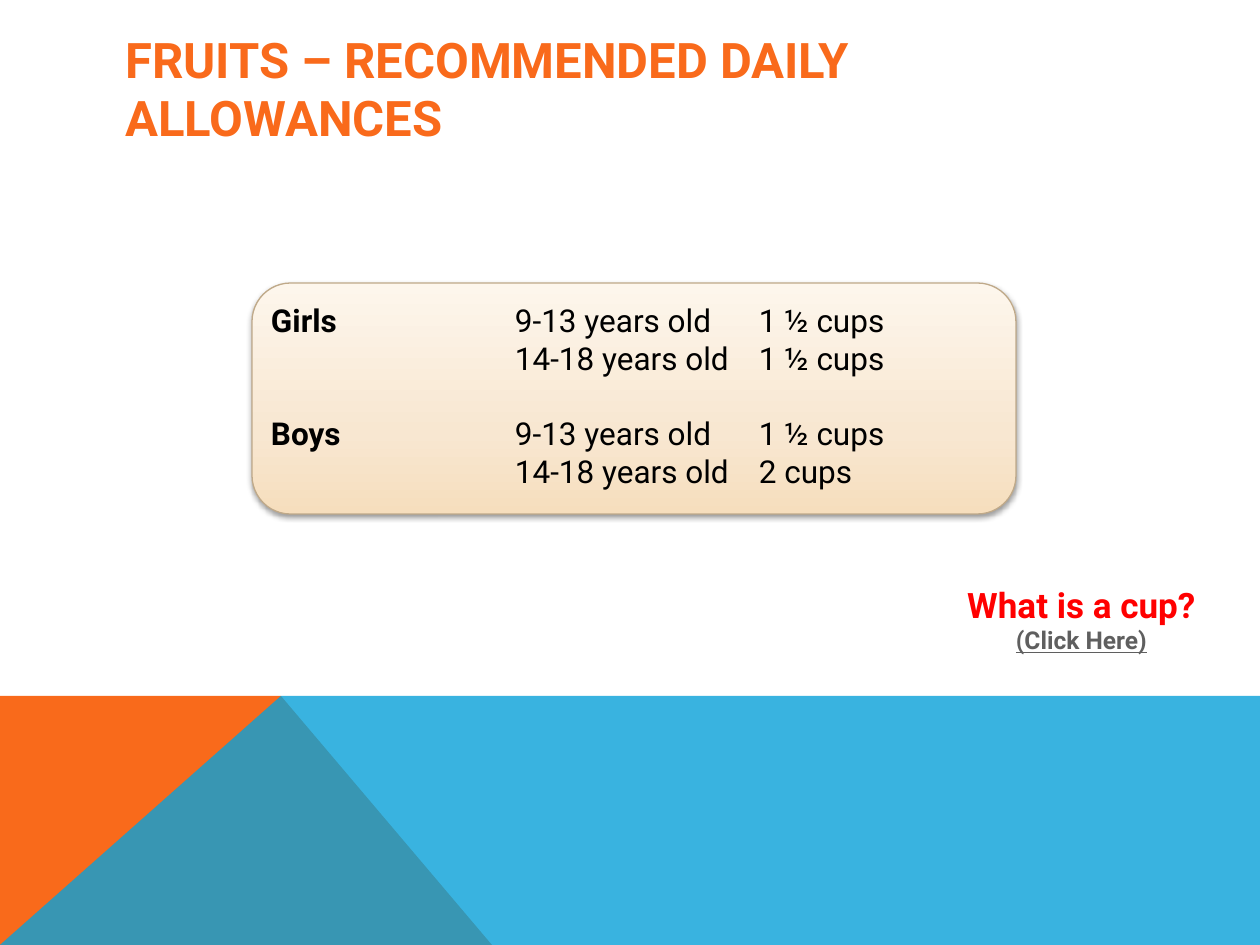
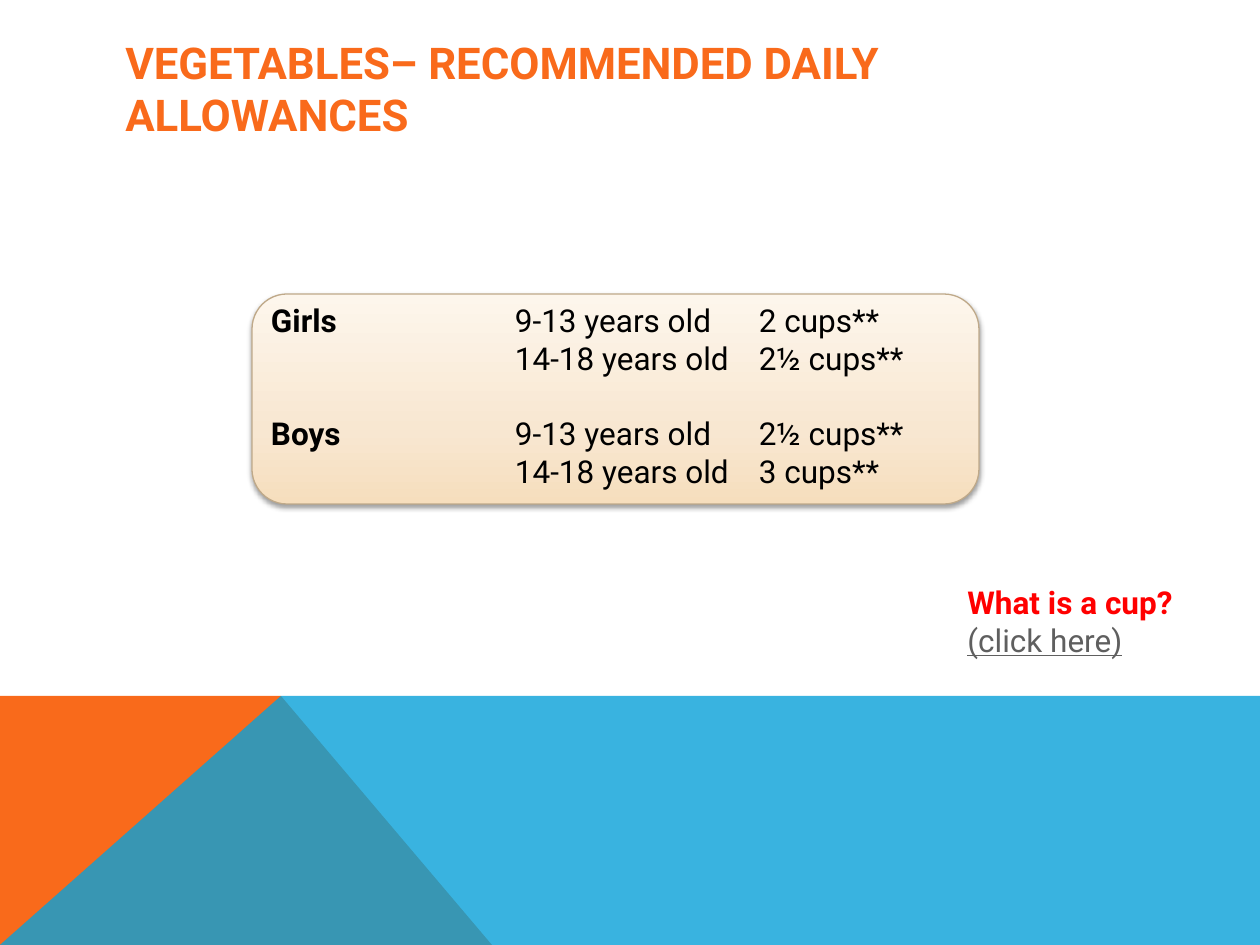
from lxml.etree import SubElement
from pptx import Presentation
from pptx.dml.color import RGBColor
from pptx.enum.shapes import MSO_SHAPE as Shape
from pptx.enum.text import MSO_ANCHOR as Anchor, PP_ALIGN as Align
from pptx.oxml import parse_xml
from pptx.oxml.ns import nsdecls, qn
from pptx.util import Pt

PX = 914400 / 126
PAGE_W, PAGE_H = 1260, 945
FONT = "Roboto"
NO_STYLE = "{2D5ABB26-0587-4C30-8999-92F81FD0307C}"
COLORS = {
    "orange": "F96A1B", "blue": "08A1D9", "black": "000000",
    "red": "FF0000", "link": "5F5F5F", "panel_line": "BFA989",
    "panel_low": "F6DEBD", "panel_mid": "F8E7D1", "panel_high": "FDF6EC",
}


def px(*values):
    return [round(value * PX) for value in values]


def color(name):
    return RGBColor.from_string(COLORS[name])


def style(para, size, ink, bold=False, underline=False):
    for span in para.runs:
        font = span.font
        font.name, font.size, font.bold = FONT, Pt(size), bold
        font.underline = underline
        font.color.rgb = color(ink)


def add_text_box(page, box, text):
    frame = page.shapes.add_textbox(*px(*box)).text_frame
    frame.word_wrap = True
    frame.text = text
    return frame


def add_polygon(page, points, ink, alpha=100):
    builder = page.shapes.build_freeform(*points[0], scale=PX)
    builder.add_line_segments(points[1:], close=True)
    polygon = builder.convert_to_shape()
    polygon.shadow.inherit = False
    polygon.fill.solid()
    polygon.fill.fore_color.rgb = color(ink)
    polygon.line.fill.background()
    if alpha < 100:
        tint = polygon.fill._xPr.find(".//" + qn("a:srgbClr"))
        SubElement(tint, qn("a:alpha"), val=str(alpha * 1000))


def add_band(page, box):
    """Orange corner under a translucent blue field."""
    left, top, width, height = box
    right, bottom = left + width, top + height
    apex, foot = (left + 281, top), (left + 492, bottom)
    add_polygon(page, [(left, bottom), (left, top), apex, foot], "orange")
    add_polygon(page, [(left, bottom), apex, (right, top), (right, bottom)],
                "blue", alpha=80)


def add_title(page, box, text, size):
    frame = add_text_box(page, box, text)
    frame.vertical_anchor = Anchor.MIDDLE
    style(frame.paragraphs[0], size, "orange", bold=True)


def add_panel(page, box):
    """Rounded panel with a vertical gradient and a soft shadow."""
    panel = page.shapes.add_shape(Shape.ROUNDED_RECTANGLE, *px(*box))
    panel.line.color.rgb = color("panel_line")
    panel.line.width = Pt(0.75)
    stops = [(0, "panel_low"), (35, "panel_mid"), (100, "panel_high")]
    stop_xml = "".join(
        f'<a:gs pos="{pos * 1000}"><a:srgbClr val="{COLORS[name]}"/></a:gs>'
        for pos, name in stops)
    props = panel._element.spPr
    props.find(qn("a:prstGeom")).addnext(parse_xml(
        f'<a:gradFill {nsdecls("a")} rotWithShape="1"><a:gsLst>{stop_xml}'
        '</a:gsLst><a:lin ang="16200000" scaled="0"/></a:gradFill>'))
    props.append(parse_xml(
        f'<a:effectLst {nsdecls("a")}><a:outerShdw blurRad="40000" '
        'dist="20000" dir="5400000" rotWithShape="0">'
        f'<a:srgbClr val="{COLORS["black"]}"><a:alpha val="38000"/></a:srgbClr>'
        '</a:outerShdw></a:effectLst>'))


def add_allowances(page, box, amounts):
    """Table of groups, ages and amounts, with narrow gap columns."""
    girls, boys = amounts[:2], amounts[2:]
    ages = ["9-13 years old", "14-18 years old"]
    rows = [["Girls", ages[0], girls[0]], ["", ages[1], girls[1]],
            ["", "", ""],
            ["Boys", ages[0], boys[0]], ["", ages[1], boys[1]]]
    frame = page.shapes.add_table(len(rows), 5, *px(*box))
    table = frame.table
    table.first_row = table.horz_banding = False
    table._tbl.tblPr.find(qn("a:tableStyleId")).text = NO_STYLE
    for column, width in zip(table.columns, [239, 4, 239, 4, 239]):
        column.width = px(width)[0]
    for row in table.rows:
        row.height = px(box[3] / len(rows))[0]
    for cell in table.iter_cells():
        cell.margin_left = cell.margin_right = 0
        cell.margin_top = cell.margin_bottom = 0
        cell.vertical_anchor = Anchor.MIDDLE
        cell.fill.background()
        # Small end marks keep empty cells from stretching the rows
        mark = cell.text_frame.paragraphs[0]._p.get_or_add_endParaRPr()
        mark.set("sz", "1000")
    for r, texts in enumerate(rows):
        for c, text in enumerate(texts):
            if text:
                para = table.cell(r, 2 * c).text_frame.paragraphs[0]
                para.text = text
                style(para, 18, "black", bold=c == 0)
    table.cell(2, 0).merge(table.cell(2, 4))


def add_cup_note(page, box, link, sizes, align, link_bold):
    frame = add_text_box(page, box, f"What is a cup?\n{link}")
    question, pointer = frame.paragraphs
    question.alignment = pointer.alignment = align
    style(question, sizes[0], "red", bold=True)
    style(pointer, sizes[1], "link", bold=link_bold, underline=True)


def add_food_page(deck, title, title_size, panel, amounts, note):
    page = deck.slides.add_slide(deck.slide_layouts[6])
    add_band(page, (0, 696, PAGE_W, PAGE_H - 696))
    add_panel(page, panel)
    add_title(page, (113, 50, 1036, 76), title, title_size)
    add_allowances(page, (271, 303, 725, 185), amounts)
    add_cup_note(page, **note)


def main():
    deck = Presentation()
    deck.slide_width, deck.slide_height = px(PAGE_W, PAGE_H)
    add_food_page(
        deck, "FRUITS – RECOMMENDED DAILY ALLOWANCES", 28,
        panel=(252, 283, 764, 231),
        amounts=["1 ½ cups", "1 ½ cups", "1 ½ cups", "2 cups"],
        note=dict(box=(924, 577, 315, 84), link="(Click Here)",
                  sizes=(20, 14), align=Align.CENTER, link_bold=True))
    add_food_page(
        deck, "VEGETABLES– RECOMMENDED DAILY ALLOWANCES", 25,
        panel=(252, 294, 727, 210),
        amounts=["2 cups**", "2½ cups**", "2½ cups**", "3 cups**"],
        note=dict(box=(955, 577, 231, 89), link="(click here)",
                  sizes=(18, 18), align=Align.LEFT, link_bold=False))
    deck.save("out.pptx")


if __name__ == "__main__":
    main()
